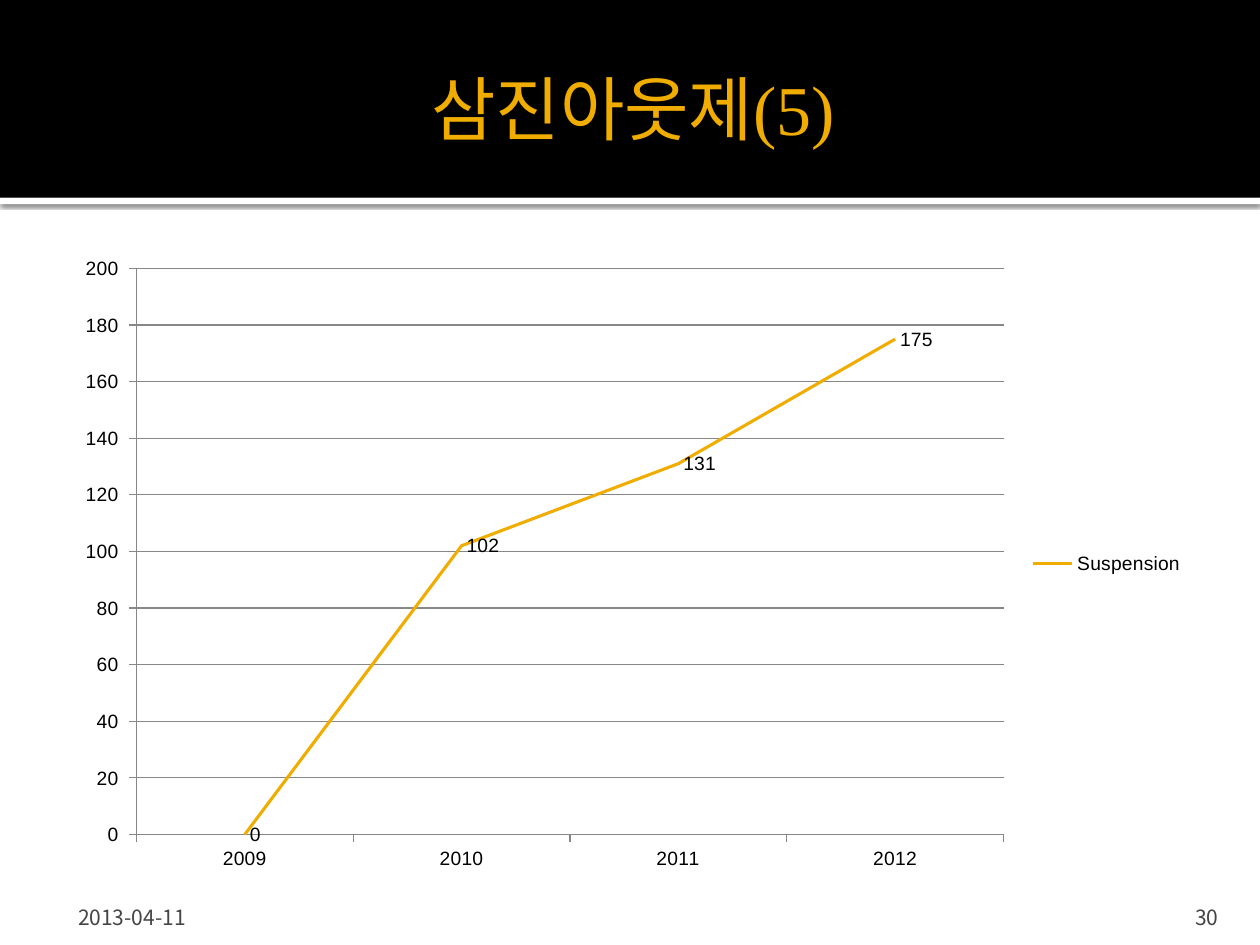
import pptx
import pptx.chart.data
import pptx.dml.color
import pptx.enum.chart
import pptx.enum.shapes
import pptx.enum.text
import pptx.oxml
import pptx.oxml.ns
import pptx.util
from pptx.util import Inches, Pt

RGB = pptx.dml.color.RGBColor.from_string
ALIGN = pptx.enum.text.PP_ALIGN
ANCHOR = pptx.enum.text.MSO_ANCHOR

THEME = {
    "gold": RGB("F0AD00"), "black": RGB("000000"), "white": RGB("FFFFFF"),
    "footer": RGB("454545"), "grid": RGB("878787"),
    "title_font": "Times New Roman", "footer_font": "Noto Sans CJK KR", "chart_font": "Arial",
    "title_size": Pt(40), "footer_size": Pt(12), "chart_size": Pt(11),
}


def write(shape, text, role, color, align, anchor, insets):
    """Fill a text shape with one paragraph in the theme's style for the role."""
    tf = shape.text_frame
    tf.word_wrap = True
    tf.vertical_anchor = anchor
    tf.margin_left, tf.margin_top, tf.margin_right, tf.margin_bottom = map(Inches, insets)
    p = tf.paragraphs[0]
    p.text = text
    p.alignment = align
    p.font.name = THEME[role + "_font"]
    p.font.size = THEME[role + "_size"]
    p.font.color.rgb = THEME[color]


prs = pptx.Presentation()
prs.slide_width, prs.slide_height = Inches(10), Inches(7.5)
s = prs.slides.add_slide(prs.slide_layouts[5])

# Title over a black header band with a white, shadowed edge
title = s.shapes.title
title.left, title.top, title.width, title.height = map(Inches, (0.5, 0.17, 9, 1.37))
write(title, "삼진아웃제(5)", "title", "gold", ALIGN.CENTER, ANCHOR.MIDDLE, (0.1, 0.05, 0.05, 0.05))

bands = []
for top, height, color in ((1.57, 0.05, "white"), (0, 1.57, "black")):
    band = s.shapes.add_shape(pptx.enum.shapes.MSO_SHAPE.RECTANGLE,
                              0, Inches(top), prs.slide_width, Inches(height))
    band.shadow.inherit = False
    band.fill.solid()
    band.fill.fore_color.rgb = THEME[color]
    band.line.fill.background()
    title.element.addprevious(band.element)
    bands.append(band)

effects = bands[0].element.spPr.find(pptx.oxml.ns.qn("a:effectLst"))
effects.append(pptx.oxml.parse_xml(
    f'<a:outerShdw {pptx.oxml.ns.nsdecls("a")} blurRad="{Pt(2.5)}" dist="{Pt(0.8)}" '
    'dir="5400000" algn="t" rotWithShape="0">'
    '<a:srgbClr val="000000"><a:alpha val="60000"/></a:srgbClr></a:outerShdw>'))

# Date and slide number
for text, left, width, align, insets in (
    ("2013-04-11", 0.5, 2.33, ALIGN.LEFT, (0.12, 0.05, 0.05, 0)),
    ("30", 8.97, 0.8, ALIGN.RIGHT, (0.1, 0.05, 0.1, 0)),
):
    box = s.shapes.add_textbox(Inches(left), Inches(7.08), Inches(width), Inches(0.3))
    write(box, text, "footer", "footer", align, ANCHOR.BOTTOM, insets)

# Suspensions per year
data = pptx.chart.data.CategoryChartData()
data.categories = ["2009", "2010", "2011", "2012"]
data.add_series("Suspension", (0, 102, 131, 175))
chart = s.shapes.add_chart(pptx.enum.chart.XL_CHART_TYPE.LINE, Inches(0.5), Inches(1.94),
                           Inches(9), Inches(5.06), data).chart
chart.has_title = False
chart.font.name = THEME["chart_font"]
chart.font.size = THEME["chart_size"]
chart.font.color.rgb = THEME["black"]
chart.has_legend = True
chart.legend.position = pptx.enum.chart.XL_LEGEND_POSITION.RIGHT
chart.legend.include_in_layout = False

value_axis = chart.value_axis
value_axis.minimum_scale, value_axis.maximum_scale, value_axis.major_unit = 0, 200, 20
value_axis.has_major_gridlines = True
value_axis.tick_labels.number_format = "0_ "
value_axis.tick_labels.number_format_is_linked = False
for axis in (chart.category_axis, value_axis):
    axis.major_tick_mark = pptx.enum.chart.XL_TICK_MARK.OUTSIDE
for part in (chart.category_axis, value_axis, value_axis.major_gridlines):
    part.format.line.color.rgb = THEME["grid"]
    part.format.line.width = Pt(0.75)

plot = chart.plots[0]
plot.vary_by_categories = False
series = plot.series[0]
series.smooth = False
series.marker.style = pptx.enum.chart.XL_MARKER_STYLE.NONE
series.format.line.color.rgb = THEME["gold"]
series.format.line.width = Pt(1.75)
labels = series.data_labels
labels.show_value = True
labels.position = pptx.enum.chart.XL_LABEL_POSITION.RIGHT

prs.save("out.pptx")
